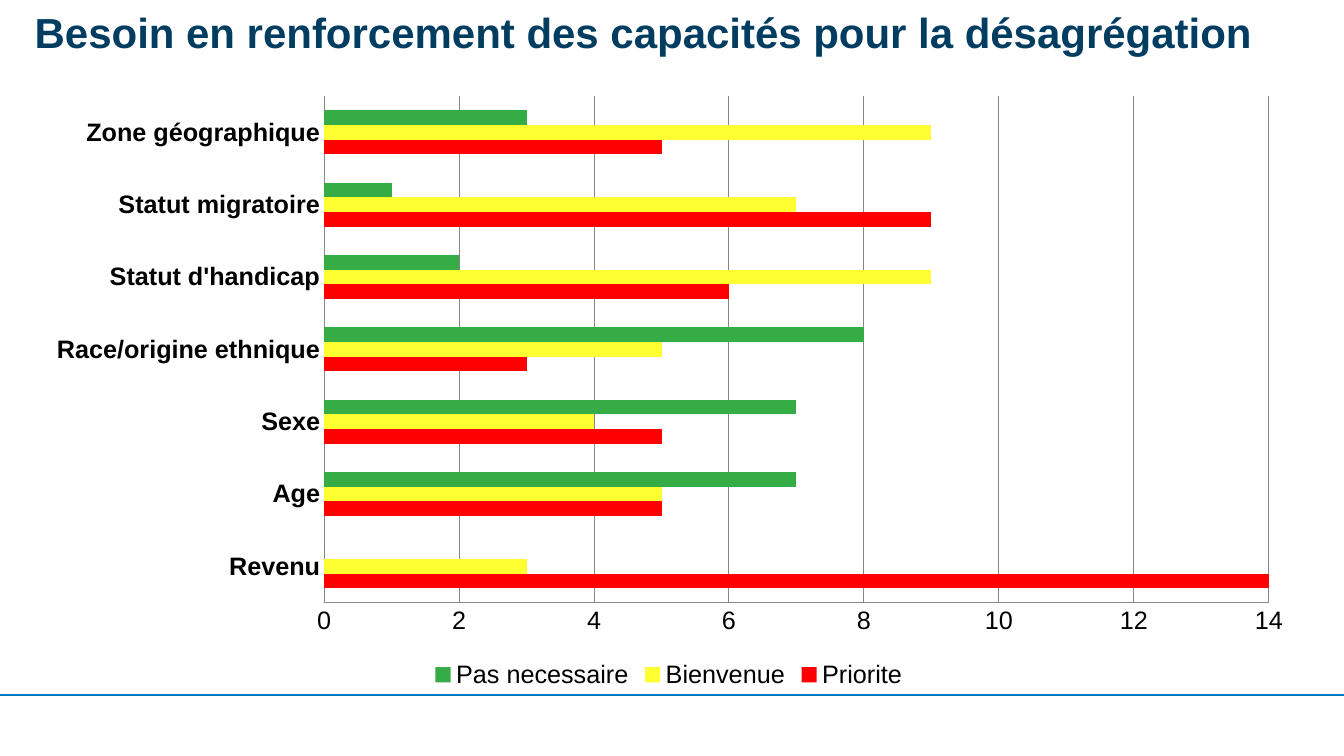
"""Build a slide with a bar chart of capacity-building needs for data disaggregation."""
from lxml import etree
from pptx import Presentation
from pptx import util as u
from pptx.chart.data import CategoryChartData
from pptx.dml.color import RGBColor
from pptx.enum import chart as ch, shapes, text
from pptx.oxml import ns

PX = 9525
FONT = "Arial"
AXIS_GREY = "878787"


def colour(hex_code):
    return RGBColor.from_string(hex_code)


def px(*lengths):
    return [u.Emu(length * PX) for length in lengths]


deck = Presentation()
deck.slide_width, deck.slide_height = px(1280, 720)
slide = deck.slides.add_slide(deck.slide_layouts[5])

footer_rule = slide.shapes.add_connector(shapes.MSO_CONNECTOR.STRAIGHT, *px(0, 662, 1280, 662))
footer_rule.line.color.rgb = colour("007AC2")
footer_rule.line.width = u.Pt(1.5)
etree.SubElement(footer_rule._element.spPr, ns.qn("a:effectLst"))

title = slide.shapes.title
title.left, title.top, title.width, title.height = px(33, 6, 1213, 48)
frame = title.text_frame
frame.text = "Besoin en renforcement des capacités pour la désagrégation"
frame.margin_left = frame.margin_top = frame.margin_right = frame.margin_bottom = 0
frame.vertical_anchor = text.MSO_ANCHOR.TOP
frame.auto_size = text.MSO_AUTO_SIZE.NONE
frame.word_wrap = True
heading = frame.paragraphs[0]
heading.alignment = text.PP_ALIGN.LEFT
heading_font = heading.runs[0].font
heading_font.name, heading_font.size, heading_font.bold = FONT, u.Pt(30), True
heading_font.color.rgb = colour("003D61")

needs = [
    ("Priorite", (14, 5, 5, 3, 6, 9, 5), "FF0000"),
    ("Bienvenue", (3, 5, 4, 5, 9, 7, 9), "FFFF31"),
    ("Pas necessaire", (0, 7, 7, 8, 2, 1, 3), "35AC46"),
]
data = CategoryChartData(number_format="###0")
data.categories = ["Revenu", "Age", "Sexe", "Race/origine ethnique",
                   "Statut d'handicap", "Statut migratoire", "Zone géographique"]
for level, counts, _ in needs:
    data.add_series(level, counts)

chart = slide.shapes.add_chart(ch.XL_CHART_TYPE.BAR_CLUSTERED, *px(29, 80, 1216, 581), data).chart
chart.has_title = False
chart.font.name, chart.font.size = FONT, u.Pt(18)
chart.font.color.rgb = colour("000000")

bars = chart.plots[0]
bars.gap_width, bars.overlap = 193, 0
bars.vary_by_categories = False
for series, (_, _, fill) in zip(bars.series, needs):
    series.format.fill.solid()
    series.format.fill.fore_color.rgb = colour(fill)
    series.invert_if_negative = False

dimensions, counts_axis = chart.category_axis, chart.value_axis
for axis in (dimensions, counts_axis):
    axis.major_tick_mark = axis.minor_tick_mark = ch.XL_TICK_MARK.NONE
    axis.format.line.color.rgb = colour(AXIS_GREY)
dimensions.has_major_gridlines = False
dimensions.tick_labels.font.bold = True
counts_axis.minimum_scale, counts_axis.maximum_scale, counts_axis.major_unit = 0, 14, 2
counts_axis.tick_labels.number_format = "###0"
counts_axis.tick_labels.number_format_is_linked = False
counts_axis.has_major_gridlines = True
counts_axis.major_gridlines.format.line.color.rgb = colour(AXIS_GREY)

chart.has_legend = True
chart.legend.position = ch.XL_LEGEND_POSITION.BOTTOM
chart.legend.include_in_layout = False

plot_area = chart._chartSpace.chart.plotArea
for old_layout in plot_area.findall(ns.qn("c:layout")):
    plot_area.remove(old_layout)
layout = etree.Element(ns.qn("c:layout"))
plot_area.insert(0, layout)
manual = etree.SubElement(layout, ns.qn("c:manualLayout"))
for tag, value in [("layoutTarget", "inner"), ("xMode", "edge"), ("yMode", "edge"),
                   ("x", "0.23"), ("y", "0.02"), ("w", "0.74"), ("h", "0.83")]:
    etree.SubElement(manual, ns.qn(f"c:{tag}")).set("val", value)

deck.save("out.pptx")
